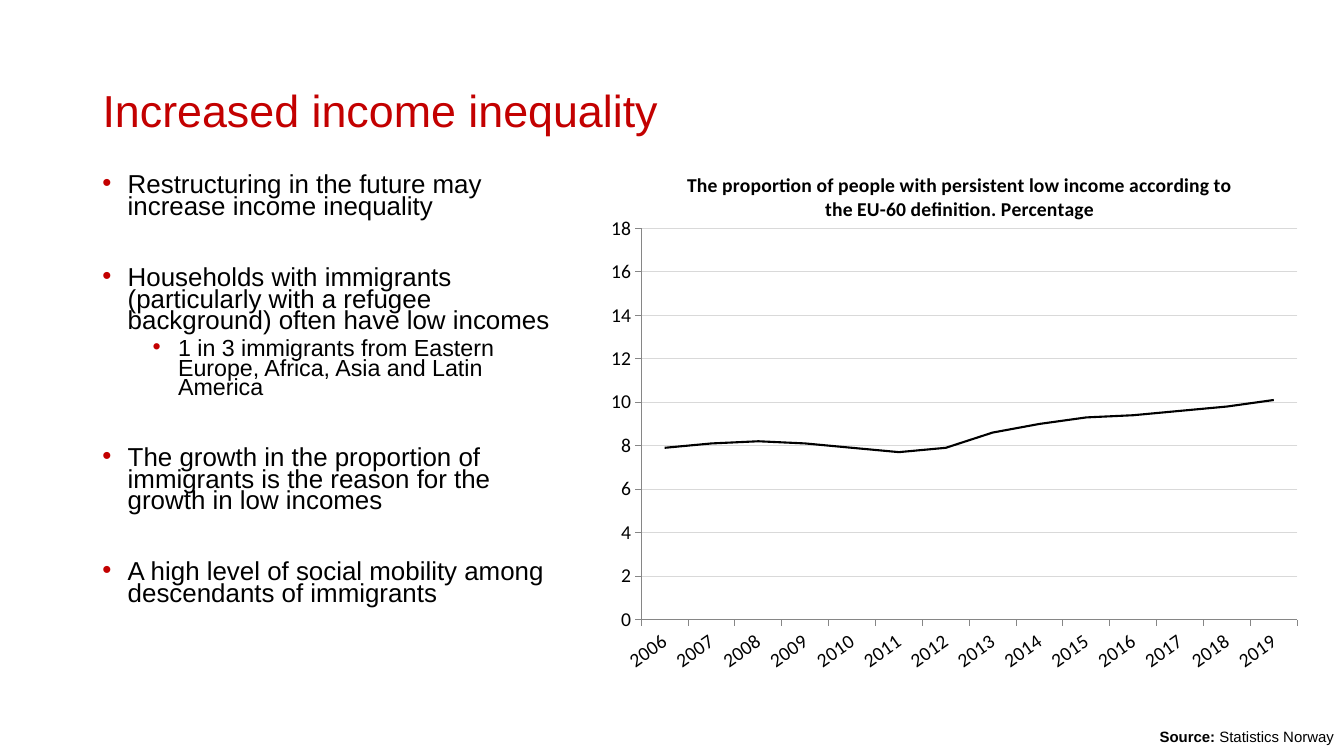
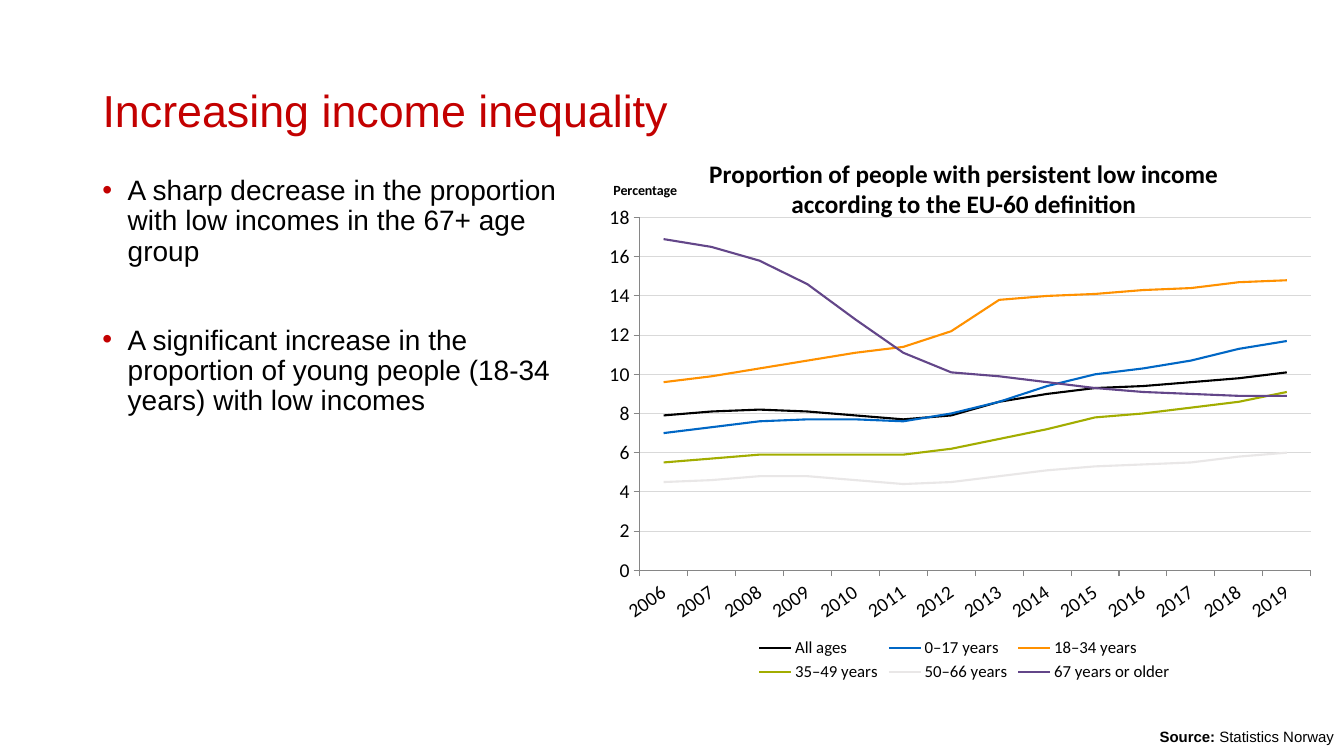
from lxml import etree
from pptx import Presentation
from pptx import util as u
from pptx.chart.data import CategoryChartData
from pptx.dml.color import RGBColor
from pptx.enum import chart as ch, text
from pptx.oxml import ns

rgb = RGBColor.from_string
Cm, Pt = u.Cm, u.Pt
RED, BLACK = "C30000", "000000"
GRID, AXIS = "D9D9D9", "868686"
BODY_FONT, CHART_FONT = "Arial", "Calibri"
YEARS = [str(year) for year in range(2006, 2020)]
ALL_AGES = [7.9, 8.1, 8.2, 8.1, 7.9, 7.7, 7.9, 8.6, 9, 9.3, 9.4, 9.6, 9.8, 10.1]

SLIDES = [
    {
        "title": "Increased income inequality",
        "line_spacing": 0.7,
        # level, size, space before, text
        "bullets": [
            (0, 18.5, 0, "Restructuring in the future may increase income inequality"),
            (0, 18.5, 35, "Households with immigrants (particularly with a refugee "
                          "background) often have low incomes"),
            (1, 16.6, 5, "1 in 3 immigrants from Eastern Europe, Africa, Asia and "
                         "Latin America"),
            (0, 18.5, 35, "The growth in the proportion of immigrants is the reason "
                          "for the growth in low incomes"),
            (0, 18.5, 35, "A high level of social mobility among descendants of "
                          "immigrants"),
        ],
        "chart_box": (15.27, 3.81, 17.78, 13.89),
        "chart_title": "The proportion of people with persistent low income "
                       "according to the EU-60 definition. Percentage",
        "chart_title_size": 14,
        "chart_title_at": (0.11, 0.03),
        "plot": (0.05, 0.14, 0.93, 0.71),
        "axis_title": None,
        "series": [("Series 1", BLACK, ALL_AGES)],
    },
    {
        "title": "Increasing income inequality",
        "line_spacing": 0.9,
        "bullets": [
            (0, 20, 0, "A sharp decrease in the proportion with low incomes in the "
                       "67+ age group"),
            (0, 20, 42, "A significant increase in the proportion of young people "
                        "(18-34 years) with low incomes"),
        ],
        "chart_box": (15.21, 3.4, 18.19, 13.89),
        "chart_title": "Proportion of people with persistent low income according "
                       "to the EU-60 definition",
        "chart_title_size": 18,
        "chart_title_at": (0.14, 0.03),
        "plot": (0.05, 0.15, 0.93, 0.64),
        "axis_title": "Percentage",
        "series": [
            ("All ages", BLACK, ALL_AGES),
            ("0–17 years", "0067C5",
             [7, 7.3, 7.6, 7.7, 7.7, 7.6, 8, 8.6, 9.4, 10, 10.3, 10.7, 11.3, 11.7]),
            ("18–34 years", "FF9100",
             [9.6, 9.9, 10.3, 10.7, 11.1, 11.4, 12.2, 13.8, 14, 14.1, 14.3, 14.4,
              14.7, 14.8]),
            ("35–49 years", "A2AD00",
             [5.5, 5.7, 5.9, 5.9, 5.9, 5.9, 6.2, 6.7, 7.2, 7.8, 8, 8.3, 8.6, 9.1]),
            ("50–66 years", "E9E7E7",
             [4.5, 4.6, 4.8, 4.8, 4.6, 4.4, 4.5, 4.8, 5.1, 5.3, 5.4, 5.5, 5.8, 6]),
            ("67 years or older", "634689",
             [16.9, 16.5, 15.8, 14.6, 12.8, 11.1, 10.1, 9.9, 9.6, 9.3, 9.1, 9, 8.9,
              8.9]),
        ],
    },
]


def add_run(p, words, size, color=BLACK, bold=False, font=BODY_FONT):
    r = p.add_run()
    r.text = words
    r.font.size, r.font.bold, r.font.name = Pt(size), bold, font
    r.font.color.rgb = rgb(color)


def set_layout(element, **fractions):
    """Place a chart part by x, y and optionally w, h, as fractions of the chart."""
    layout = element.find(ns.qn("c:layout"))
    if layout is None:
        layout = etree.Element(ns.qn("c:layout"))
        element.insert(0, layout)
    manual = etree.SubElement(layout, ns.qn("c:manualLayout"))
    settings = {"xMode": "edge", "yMode": "edge", **fractions}
    if "w" in fractions:
        settings = {"layoutTarget": "inner", **settings}
    for name, value in settings.items():
        etree.SubElement(manual, ns.qn("c:" + name)).set("val", str(value))


prs = Presentation()
prs.slide_width, prs.slide_height = Cm(33.87), Cm(19.05)

for content in SLIDES:
    s = prs.slides.add_slide(prs.slide_layouts[5])

    # Title
    sp = s.shapes.title
    sp.left, sp.top, sp.width, sp.height = Cm(2.33), Cm(1.35), Cm(29.21), Cm(2.97)
    tf = sp.text_frame
    tf.auto_size = text.MSO_AUTO_SIZE.NONE
    tf.vertical_anchor = text.MSO_ANCHOR.MIDDLE
    p = tf.paragraphs[0]
    p.alignment, p.line_spacing = text.PP_ALIGN.LEFT, 0.9
    add_run(p, content["title"], 32, RED)

    # Bullets
    tf = s.shapes.add_textbox(Cm(2.33), Cm(4.32), Cm(12.3), Cm(12.09)).text_frame
    tf.word_wrap = True
    for i, (level, size, before, words) in enumerate(content["bullets"]):
        p = tf.add_paragraph() if i else tf.paragraphs[0]
        p.level = level
        pPr = p._p.get_or_add_pPr()
        pPr.set("marL", str(Cm(0.64 + 1.27 * level)))
        pPr.set("indent", str(-Cm(0.64)))
        color = etree.SubElement(pPr, ns.qn("a:buClr"))
        etree.SubElement(color, ns.qn("a:srgbClr")).set("val", RED)
        etree.SubElement(pPr, ns.qn("a:buFont")).set("typeface", BODY_FONT)
        etree.SubElement(pPr, ns.qn("a:buChar")).set("char", "•")
        p.line_spacing, p.space_before = content["line_spacing"], Pt(before)
        add_run(p, words, size)

    # Chart
    data = CategoryChartData()
    data.categories = YEARS
    for name, _, values in content["series"]:
        data.add_series(name, values)
    box = [Cm(length) for length in content["chart_box"]]
    chart = s.shapes.add_chart(ch.XL_CHART_TYPE.LINE, *box, data).chart
    chart.font.size, chart.font.name = Pt(10), CHART_FONT
    chart.font.color.rgb = rgb(BLACK)
    root = chart._chartSpace

    add_run(chart.chart_title.text_frame.paragraphs[0], content["chart_title"],
            content["chart_title_size"], bold=True, font=CHART_FONT)
    x, y = content["chart_title_at"]
    set_layout(root.xpath("c:chart/c:title")[0], x=x, y=y)
    x, y, w, h = content["plot"]
    set_layout(root.xpath("c:chart/c:plotArea")[0], x=x, y=y, w=w, h=h)

    chart.plots[0].vary_by_categories = False
    for series, (_, color, _) in zip(chart.plots[0].series, content["series"]):
        series.smooth = False
        series.marker.style = ch.XL_MARKER_STYLE.NONE
        series.format.line.width = Pt(1.5)
        series.format.line.color.rgb = rgb(color)

    years, percent = chart.category_axis, chart.value_axis
    for axis in (years, percent):
        axis.tick_labels.font.size = Pt(14)
        axis.major_tick_mark = ch.XL_TICK_MARK.OUTSIDE
        axis.minor_tick_mark = ch.XL_TICK_MARK.NONE
        axis.format.line.width = Pt(0.75)
        axis.format.line.color.rgb = rgb(AXIS)
    root.xpath(".//c:catAx/c:txPr/a:bodyPr")[0].set("rot", str(-35 * 60000))
    percent.minimum_scale, percent.maximum_scale, percent.major_unit = 0, 18, 2
    percent.has_major_gridlines = True
    percent.major_gridlines.format.line.width = Pt(0.75)
    percent.major_gridlines.format.line.color.rgb = rgb(GRID)
    if content["axis_title"]:
        tf = percent.axis_title.text_frame
        add_run(tf.paragraphs[0], content["axis_title"], 10, bold=True, font=CHART_FONT)
        axis_title = root.xpath(".//c:valAx/c:title")[0]
        axis_title.xpath(".//a:bodyPr")[0].set("rot", "0")
        set_layout(axis_title, x=0.01, y=0.08)

    chart.has_legend = len(content["series"]) > 1
    if chart.has_legend:
        chart.legend.position = ch.XL_LEGEND_POSITION.BOTTOM
        chart.legend.include_in_layout = False
        chart.legend.font.size = Pt(12)

    # Source
    tf = s.shapes.add_textbox(Cm(27.05), Cm(18.21), Cm(6.82), Cm(0.71)).text_frame
    tf.word_wrap = True
    p = tf.paragraphs[0]
    p.alignment = text.PP_ALIGN.RIGHT
    add_run(p, "Source:", 10.7, bold=True)
    add_run(p, " Statistics Norway", 10.7)

prs.save("out.pptx")
